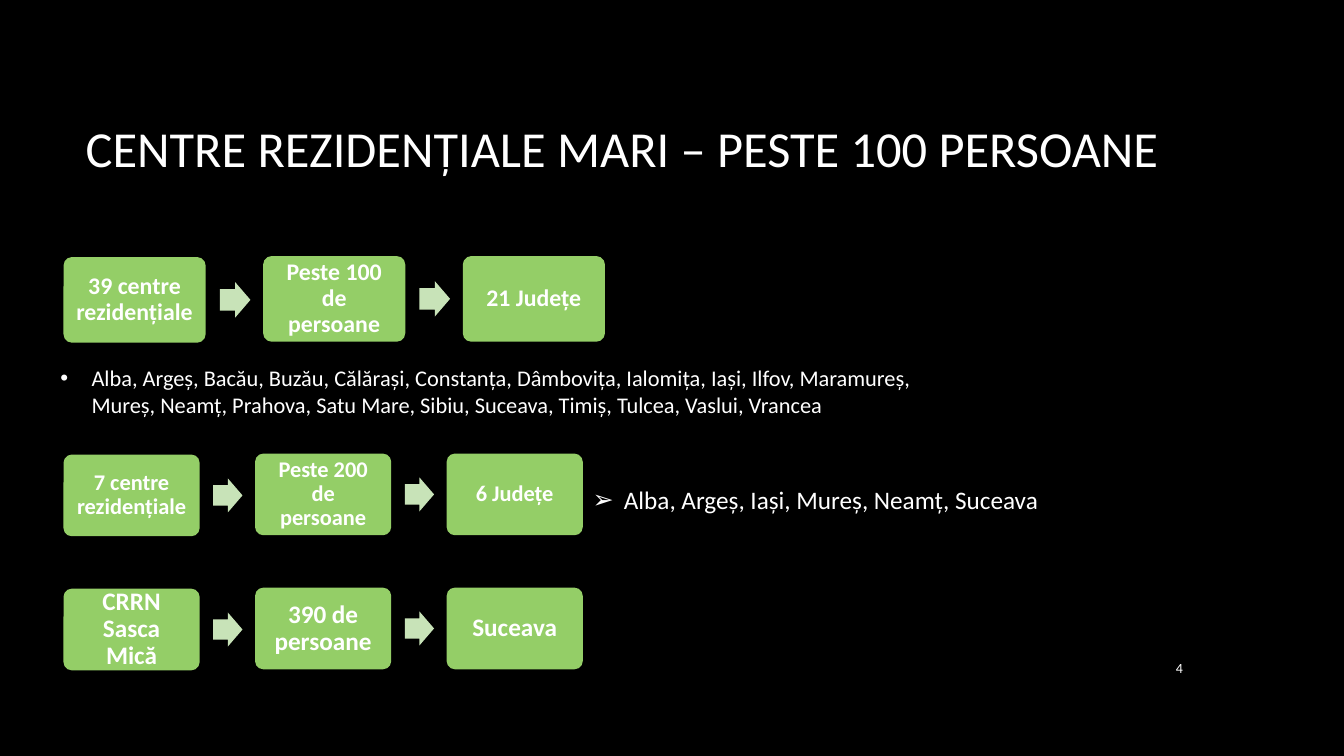
"""Build the slide on large residential centres."""
from lxml.etree import SubElement
from pptx import Presentation
from pptx.dml.color import RGBColor
from pptx.enum.shapes import MSO_SHAPE
from pptx.enum.text import MSO_ANCHOR, PP_ALIGN
from pptx.oxml.ns import qn
from pptx.util import Inches, Pt

BLACK = RGBColor(0x00, 0x00, 0x00)
WHITE = RGBColor(0xFF, 0xFF, 0xFF)
GREEN = RGBColor(0x94, 0xCE, 0x67)
PALE_GREEN = RGBColor(0xC8, 0xE3, 0xB8)
FONT = "Calibri"

FLOW_LEFT = 0.63
FLOWS = [
    (2.54, 1.41, 0.85, 1.98, 17,
     ["39 centre rezidențiale", "Peste 100 de persoane", "21 Județe"]),
    (4.5, 1.35, 0.81, 1.9, 16,
     ["7 centre rezidențiale", "Peste 200 de persoane", "6 Județe"]),
    (5.83, 1.35, 0.81, 1.9, 18,
     ["CRRN Sasca Mică", "390 de persoane", "Suceava"]),
]


def write(sp, text, size, bold=False, align=PP_ALIGN.LEFT,
          anchor=MSO_ANCHOR.MIDDLE, inset=None, spacing=None, bullet=None):
    tf = sp.text_frame
    tf.word_wrap = True
    tf.vertical_anchor = anchor
    if inset is not None:
        tf.margin_left = tf.margin_right = Inches(inset)
        tf.margin_top = tf.margin_bottom = Inches(inset)
    p = tf.paragraphs[0]
    p.alignment = align
    if spacing:
        p.line_spacing = spacing
    if bullet:
        pPr = p._p.get_or_add_pPr()
        pPr.set("marL", str(Inches(0.31)))
        pPr.set("indent", str(-Inches(0.31)))
        SubElement(pPr, qn("a:buFont"), typeface="Arial")
        SubElement(pPr, qn("a:buChar"), char=bullet)
    r = p.add_run()
    r.text = text
    r.font.name = FONT
    r.font.size = Pt(size)
    r.font.bold = bold
    r.font.color.rgb = WHITE


def add_text(s, left, top, width, height, text, size, **fmt):
    sp = s.shapes.add_textbox(Inches(left), Inches(top), Inches(width), Inches(height))
    write(sp, text, size, **fmt)


def add_block(s, kind, left, top, width, height, color):
    sp = s.shapes.add_shape(kind, Inches(left), Inches(top), Inches(width), Inches(height))
    sp.shadow.inherit = False
    sp.fill.solid()
    sp.fill.fore_color.rgb = color
    sp.line.fill.background()
    return sp


def add_flow(s, top, width, height, pitch, size, steps):
    arrow_width, arrow_height = 0.215 * width, 0.25 * width
    for i, step in enumerate(steps):
        left = FLOW_LEFT + i * pitch
        box_top = top if i else top + 0.01
        box = add_block(s, MSO_SHAPE.ROUNDED_RECTANGLE, left, box_top, width, height, GREEN)
        box.adjustments[0] = 0.1
        write(box, step, size, bold=True, align=PP_ALIGN.CENTER, inset=0.09, spacing=0.9)
        if i < len(steps) - 1:
            arrow = add_block(s, MSO_SHAPE.RIGHT_ARROW, left + 1.1 * width,
                              box_top + (height - arrow_height) / 2,
                              arrow_width, arrow_height, PALE_GREEN)
            arrow.adjustments[0] = 0.6
            arrow.adjustments[1] = 0.5


def add_title(s, text):
    title = s.shapes.title
    title.left, title.top = Inches(0.75), Inches(0.67)
    title.width, title.height = Inches(11.08), Inches(1.59)
    write(title, text, 36)


def main():
    prs = Presentation()
    prs.slide_width, prs.slide_height = Inches(13.33), Inches(7.5)
    s = prs.slides.add_slide(prs.slide_layouts[5])
    s.background.fill.solid()
    s.background.fill.fore_color.rgb = BLACK

    add_title(s, "CENTRE REZIDENȚIALE MARI – PESTE 100 PERSOANE")
    add_text(s, 0.5, 3.56, 9.08, 0.64,
             "Alba, Argeș, Bacău, Buzău, Călărași, Constanța, Dâmbovița, Ialomița, "
             "Iași, Ilfov, Maramureș, Mureș, Neamț, Prahova, Satu Mare, Sibiu, "
             "Suceava, Timiș, Tulcea, Vaslui, Vrancea", 16, bullet="•")
    for flow in FLOWS:
        add_flow(s, *flow)
    add_text(s, 5.78, 4.76, 5.67, 0.4, "Alba, Argeș, Iași, Mureș, Neamț, Suceava",
             18, anchor=MSO_ANCHOR.TOP, bullet="➢")
    add_text(s, 11.23, 6.42, 0.6, 0.41, "4", 10, align=PP_ALIGN.RIGHT)
    prs.save("out.pptx")


if __name__ == "__main__":
    main()
